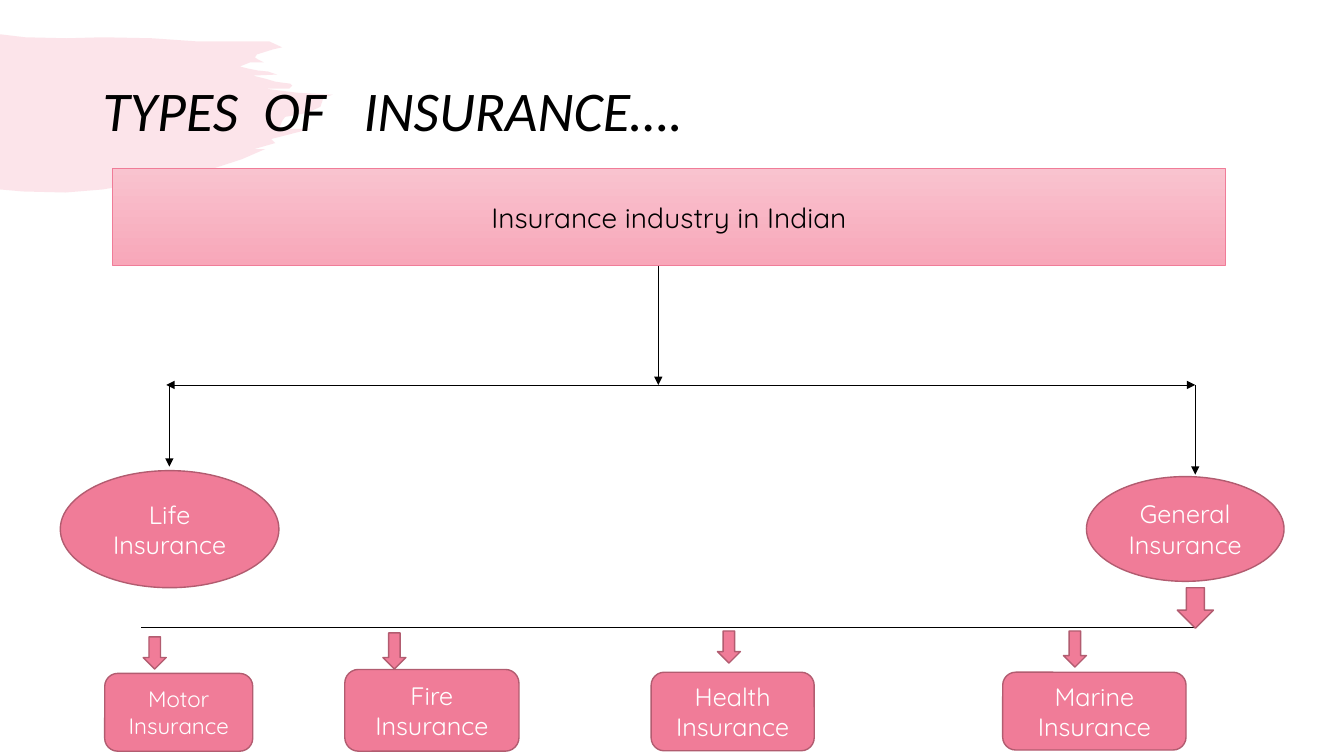
"""Build a slide with a tree diagram of the types of insurance."""

from dataclasses import dataclass

import lxml.etree
import pptx
import pptx.dml.color
import pptx.enum.shapes
import pptx.enum.text
import pptx.oxml.ns
import pptx.shapes.autoshape
import pptx.shapes.connector
import pptx.slide
import pptx.text.text
import pptx.util

Cm = pptx.util.Cm
Pt = pptx.util.Pt
Kind = pptx.enum.shapes.MSO_SHAPE

COLOURS = {
    "pink": "F07C98",
    "outline": "B25C70",
    "banner_top": "F9C3CF",
    "banner_bottom": "F8A7B9",
    "black": "000000",
    "white": "FFFFFF",
}
BODY_FONT = "Quicksand"
TITLE_FONT = "Calibri"
TITLE_PARTS = [("TYPES", 0), (" ", 9), ("OF", 0), (" ", 18), ("INSURANCE….", 0)]

BRUSH_UNIT = Cm(2.54) / 100
BRUSH_POINTS = [
    (0, 34), (25, 37), (66, 38), (102, 37), (151, 38), (194, 41), (248, 41),
    (267, 41), (280, 47), (271, 49), (255, 54), (253, 57), (256, 59), (262, 62),
    (248, 62), (238, 66), (246, 68), (256, 70), (266, 71), (275, 74), (251, 75),
    (263, 78), (273, 81), (280, 82), (288, 83), (290, 85), (287, 88), (284, 88),
    (263, 88), (295, 92), (330, 94), (321, 97), (318, 106), (307, 111), (300, 113),
    (283, 116), (280, 120), (278, 125), (274, 128), (308, 128), (269, 138),
    (273, 142), (252, 148), (263, 148), (240, 158), (197, 172), (102, 188),
    (65, 191), (23, 190), (0, 188),
]


@dataclass
class Block:
    """A filled shape with optional text, measured in centimetres."""

    kind: int
    left: float
    top: float
    width: float
    height: float
    text: str = ""
    size: int = 18


@dataclass
class Line:
    """A straight line, measured in centimetres."""

    start: tuple[float, float]
    end: tuple[float, float]
    head: bool = False
    tail: bool = True


BANNER = Block(Kind.RECTANGLE, 2.84, 4.24, 28.04, 2.46, "Insurance industry in Indian", 20)

TRUNK_X, LIFE_X, GENERAL_X = 16.59, 4.27, 30.12
SPLIT_Y, BRANCH_Y = 9.7, 15.8

LINES = [
    Line((TRUNK_X, 6.7), (TRUNK_X, SPLIT_Y)),
    Line((4.19, SPLIT_Y), (GENERAL_X, SPLIT_Y), head=True),
    Line((LIFE_X, SPLIT_Y), (LIFE_X, 11.76)),
    Line((GENERAL_X, SPLIT_Y), (GENERAL_X, 11.96)),
    Line((GENERAL_X, BRANCH_Y), (3.56, BRANCH_Y), tail=False),
]

BLOCKS = [
    Block(Kind.OVAL, 1.52, 11.86, 5.51, 2.95, "Life Insurance"),
    Block(Kind.OVAL, 27.38, 12.01, 4.98, 2.64, "General Insurance"),
    Block(Kind.DOWN_ARROW, 29.67, 14.81, 0.91, 1.02),
    Block(Kind.DOWN_ARROW, 3.61, 16.05, 0.58, 0.81),
    Block(Kind.DOWN_ARROW, 9.65, 15.95, 0.58, 0.91),
    Block(Kind.DOWN_ARROW, 18.08, 15.9, 0.58, 0.81),
    Block(Kind.DOWN_ARROW, 26.8, 15.9, 0.58, 0.91),
    Block(Kind.ROUNDED_RECTANGLE, 2.64, 16.97, 3.73, 1.96, "Motor\nInsurance", 16),
    Block(Kind.ROUNDED_RECTANGLE, 8.69, 16.87, 4.39, 2.06, "Fire\nInsurance"),
    Block(Kind.ROUNDED_RECTANGLE, 16.41, 16.94, 4.11, 1.98, "Health\nInsurance"),
    Block(Kind.ROUNDED_RECTANGLE, 25.27, 16.94, 4.62, 1.96, "Marine\nInsurance"),
]


def colour(name: str) -> pptx.dml.color.RGBColor:
    """Return a named colour."""
    return pptx.dml.color.RGBColor.from_string(COLOURS[name])


def format_run(run: pptx.text.text._Run, font: str, size: int, ink: str) -> None:
    """Set the font, size and colour of a run."""
    run.font.name = font
    run.font.size = Pt(size)
    run.font.color.rgb = colour(ink)


def add_brush(slide: pptx.slide.Slide) -> None:
    """Draw the pale brush stroke behind the title."""
    builder = slide.shapes.build_freeform(*BRUSH_POINTS[0], scale=BRUSH_UNIT)
    builder.add_line_segments(BRUSH_POINTS[1:], close=True)
    brush = builder.convert_to_shape()
    brush.shadow.inherit = False
    brush.line.fill.background()
    brush.fill.solid()
    brush.fill.fore_color.rgb = colour("pink")
    fill_colour = brush._element.spPr.find(".//" + pptx.oxml.ns.qn("a:srgbClr"))
    lxml.etree.SubElement(fill_colour, pptx.oxml.ns.qn("a:alpha"), val="20000")


def add_title(slide: pptx.slide.Slide) -> None:
    """Write the title, widening its word gaps by character spacing."""
    title = slide.shapes.add_textbox(Cm(2.34), Cm(1.02), Cm(29.21), Cm(3.68))
    title.text_frame.word_wrap = True
    title.text_frame.vertical_anchor = pptx.enum.text.MSO_ANCHOR.MIDDLE
    paragraph = title.text_frame.paragraphs[0]
    paragraph.line_spacing = 0.9
    for text, spacing in TITLE_PARTS:
        run = paragraph.add_run()
        run.text = text
        format_run(run, TITLE_FONT, 40, "black")
        run.font.italic = True
        if spacing:
            run._r.get_or_add_rPr().set("spc", str(spacing * 100))


def add_block(
    slide: pptx.slide.Slide, block: Block, ink: str = "white"
) -> pptx.shapes.autoshape.Shape:
    """Draw a pink shape with centred text."""
    shape = slide.shapes.add_shape(
        block.kind, Cm(block.left), Cm(block.top), Cm(block.width), Cm(block.height)
    )
    shape.shadow.inherit = False
    shape.fill.solid()
    shape.fill.fore_color.rgb = colour("pink")
    shape.line.color.rgb = colour("outline")
    shape.line.width = Pt(1)
    if block.text:
        shape.text_frame.text = block.text
        shape.text_frame.word_wrap = True
        shape.text_frame.vertical_anchor = pptx.enum.text.MSO_ANCHOR.MIDDLE
        for paragraph in shape.text_frame.paragraphs:
            paragraph.alignment = pptx.enum.text.PP_ALIGN.CENTER
            for run in paragraph.runs:
                format_run(run, BODY_FONT, block.size, ink)
    return shape


def add_banner(slide: pptx.slide.Slide) -> None:
    """Draw the gradient banner at the root of the tree."""
    banner = add_block(slide, BANNER, "black")
    banner.fill.gradient()
    banner.fill.gradient_angle = 270
    for stop, name in zip(banner.fill.gradient_stops, ("banner_top", "banner_bottom")):
        stop.color.rgb = colour(name)
    banner.line.color.rgb = colour("pink")
    banner.line.width = Pt(0.5)


def add_line(slide: pptx.slide.Slide, line: Line) -> pptx.shapes.connector.Connector:
    """Draw a thin black line with its arrowheads."""
    connector = slide.shapes.add_connector(
        pptx.enum.shapes.MSO_CONNECTOR.STRAIGHT, *map(Cm, line.start + line.end)
    )
    connector.line.color.rgb = colour("black")
    connector.line.width = Pt(0.5)
    outline = connector.line._get_or_add_ln()
    for tag, shown in (("a:headEnd", line.head), ("a:tailEnd", line.tail)):
        if shown:
            lxml.etree.SubElement(outline, pptx.oxml.ns.qn(tag), type="triangle")
    lxml.etree.SubElement(connector._element.spPr, pptx.oxml.ns.qn("a:effectLst"))
    return connector


def main() -> None:
    """Build and save the presentation."""
    presentation = pptx.Presentation()
    presentation.slide_width = Cm(33.87)
    presentation.slide_height = Cm(19.05)
    slide = presentation.slides.add_slide(presentation.slide_layouts[6])
    add_brush(slide)
    add_title(slide)
    add_banner(slide)
    for line in LINES:
        add_line(slide, line)
    for block in BLOCKS:
        add_block(slide, block)
    presentation.save("out.pptx")


if __name__ == "__main__":
    main()
